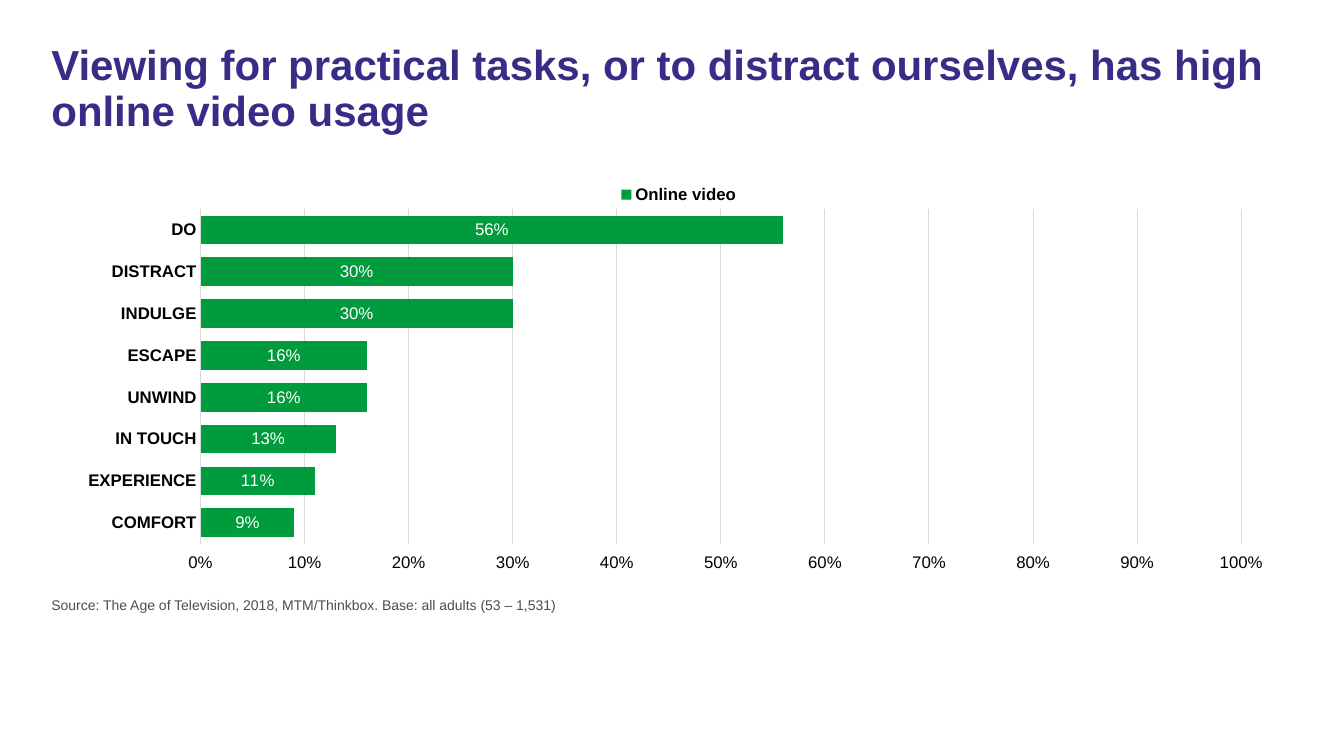
from dataclasses import dataclass

import lxml.etree
import pptx
import pptx.chart.data
import pptx.dml.color
import pptx.enum.chart
import pptx.enum.text
import pptx.oxml
import pptx.oxml.ns
import pptx.util

FONT = "Arial"
COLOURS = {
    "heading": "372D87",
    "source": "4D4D4D",
    "bar": "009B3C",
    "grid": "D9D9D9",
    "text": "000000",
    "label": "FFFFFF",
}
MARGIN, CONTENT_WIDTH = 29.5, 892.8
CHART_LEFT, CHART_TOP, CHART_WIDTH, CHART_HEIGHT = 47.5, 118.1, 860.4, 291.6


@dataclass(frozen=True)
class TextBlock:
    placeholder: int
    text: str
    top: float
    height: float
    size: float
    colour: str
    bold: bool = False
    line_spacing: float = 1.0


@dataclass(frozen=True)
class NeedState:
    name: str
    share: float


@dataclass(frozen=True)
class ChartBox:
    """Points from the top left corner of the chart."""
    left: float
    top: float
    width: float
    height: float


TEXT_BLOCKS = [
    TextBlock(0, "Viewing for practical tasks, or to distract ourselves, has high online video usage",
              28.1, 80.6, 30, "heading", True, 0.9),
    TextBlock(1, "Source: The Age of Television, 2018, MTM/Thinkbox. Base: all adults (53 – 1,531)",
              422.6, 23.8, 10, "source"),
]
NEED_STATES = [
    NeedState("DO", 0.56),
    NeedState("DISTRACT", 0.30),
    NeedState("INDULGE", 0.30),
    NeedState("ESCAPE", 0.16),
    NeedState("UNWIND", 0.16),
    NeedState("IN TOUCH", 0.13),
    NeedState("EXPERIENCE", 0.11),
    NeedState("COMFORT", 0.09),
]
LEGEND_BOX = ChartBox(390, 9.5, 94.6, 23)
PLOT_BOX = ChartBox(95.8, 31.2, 743.4, 239.1)


def colour(name: str) -> pptx.dml.color.RGBColor:
    return pptx.dml.color.RGBColor.from_string(COLOURS[name])


def set_font(font, size: float, name: str, bold: bool = False) -> None:
    font.name = FONT
    font.size = pptx.util.Pt(size)
    font.bold = bold
    font.color.rgb = colour(name)


def fill_placeholder(slide, block: TextBlock) -> None:
    holder = slide.placeholders[block.placeholder]
    holder.left, holder.top = pptx.util.Pt(MARGIN), pptx.util.Pt(block.top)
    holder.width, holder.height = pptx.util.Pt(CONTENT_WIDTH), pptx.util.Pt(block.height)
    frame = holder.text_frame
    frame.text = block.text
    frame.word_wrap = True
    frame.auto_size = pptx.enum.text.MSO_AUTO_SIZE.NONE
    frame.vertical_anchor = pptx.enum.text.MSO_ANCHOR.TOP
    paragraph = frame.paragraphs[0]
    # No bullet or hanging indent
    properties = paragraph._p.get_or_add_pPr()
    properties.set("marL", "0")
    properties.set("indent", "0")
    lxml.etree.SubElement(properties, pptx.oxml.ns.qn("a:buNone"))
    paragraph.alignment = pptx.enum.text.PP_ALIGN.LEFT
    paragraph.space_before = pptx.util.Pt(0)
    paragraph.line_spacing = block.line_spacing
    set_font(paragraph.font, block.size, block.colour, block.bold)


def set_layout(parent, after: str, box: ChartBox, inner: bool = False) -> None:
    for existing in parent.findall(pptx.oxml.ns.qn("c:layout")):
        parent.remove(existing)
    fractions = {"x": box.left / CHART_WIDTH, "y": box.top / CHART_HEIGHT,
                 "w": box.width / CHART_WIDTH, "h": box.height / CHART_HEIGHT}
    target = '<c:layoutTarget val="inner"/>' if inner else ""
    modes = '<c:xMode val="edge"/><c:yMode val="edge"/>'
    extents = "".join(f'<c:{tag} val="{value:.4f}"/>' for tag, value in fractions.items())
    layout = pptx.oxml.parse_xml(
        f'<c:layout {pptx.oxml.ns.nsdecls("c")}><c:manualLayout>'
        f"{target}{modes}{extents}</c:manualLayout></c:layout>")
    previous = parent.find(pptx.oxml.ns.qn(after)) if after else None
    if previous is None:
        parent.insert(0, layout)
    else:
        previous.addnext(layout)


def format_axis(axis, bold: bool) -> None:
    axis.major_tick_mark = pptx.enum.chart.XL_TICK_MARK.NONE
    axis.minor_tick_mark = pptx.enum.chart.XL_TICK_MARK.NONE
    axis.format.line.fill.background()
    set_font(axis.tick_labels.font, 12, "text", bold)


def add_usage_chart(slide) -> None:
    usage = pptx.chart.data.CategoryChartData(number_format="0%")
    usage.categories = [state.name for state in NEED_STATES]
    usage.add_series("Online video", [state.share for state in NEED_STATES])
    chart = slide.shapes.add_chart(
        pptx.enum.chart.XL_CHART_TYPE.BAR_STACKED,
        pptx.util.Pt(CHART_LEFT), pptx.util.Pt(CHART_TOP),
        pptx.util.Pt(CHART_WIDTH), pptx.util.Pt(CHART_HEIGHT), usage).chart
    chart.has_title = False
    set_font(chart.font, 10, "text")

    # Axes: first category on top, percentages along the bottom
    needs, shares = chart.category_axis, chart.value_axis
    format_axis(needs, True)
    format_axis(shares, False)
    needs.reverse_order = True
    shares.tick_label_position = pptx.enum.chart.XL_TICK_LABEL_POSITION.HIGH
    shares.minimum_scale, shares.maximum_scale, shares.major_unit = 0, 1, 0.1
    shares.tick_labels.number_format = "0%"
    shares.tick_labels.number_format_is_linked = False
    shares.has_major_gridlines = True
    gridline = shares.major_gridlines.format.line
    gridline.width = pptx.util.Pt(0.75)
    gridline.color.rgb = colour("grid")

    # Bars and their labels
    bars = chart.plots[0]
    bars.gap_width, bars.overlap = 46, 100
    bars.vary_by_categories = False
    online_video = bars.series[0]
    online_video.format.fill.solid()
    online_video.format.fill.fore_color.rgb = colour("bar")
    labels = online_video.data_labels
    labels.show_value = True
    labels.number_format = "0%"
    labels.number_format_is_linked = False
    labels.position = pptx.enum.chart.XL_LABEL_POSITION.CENTER
    set_font(labels.font, 12, "label")

    # Legend above the bars
    chart.has_legend = True
    legend = chart.legend
    legend.position = pptx.enum.chart.XL_LEGEND_POSITION.BOTTOM
    legend.include_in_layout = False
    set_font(legend.font, 12, "text", True)
    set_layout(legend._element, "c:legendPos", LEGEND_BOX)
    set_layout(chart._chartSpace.chart.plotArea, "", PLOT_BOX, inner=True)


def main() -> None:
    deck = pptx.Presentation()
    deck.slide_width, deck.slide_height = pptx.util.Pt(960), pptx.util.Pt(540)
    slide = deck.slides.add_slide(deck.slide_layouts[1])
    for block in TEXT_BLOCKS:
        fill_placeholder(slide, block)
    add_usage_chart(slide)
    deck.save("out.pptx")


if __name__ == "__main__":
    main()
